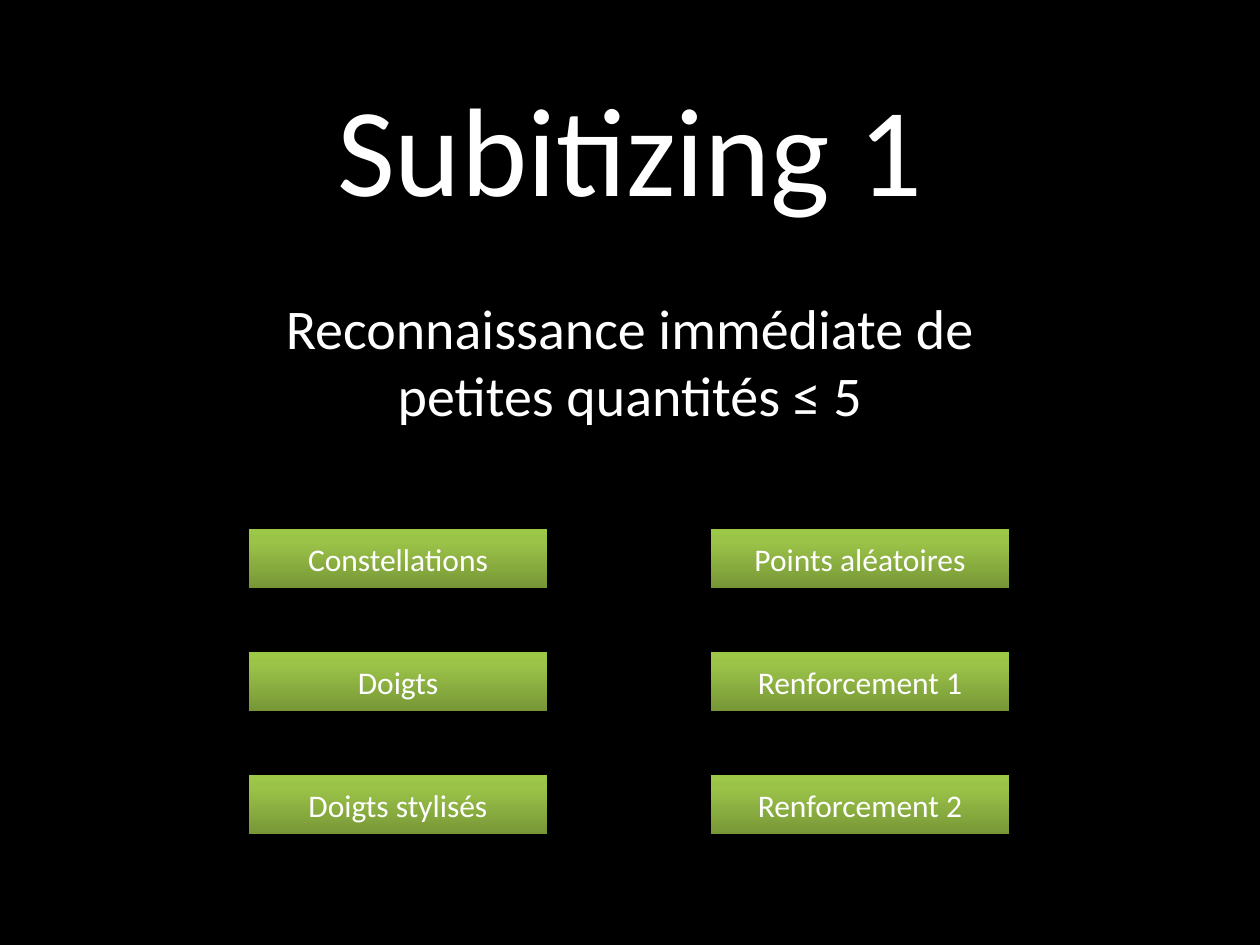
import copy
import pptx
import pptx.util
import pptx.dml.color
import pptx.enum.shapes
import pptx.enum.text
import pptx.oxml.ns

SCALE = 914400 / 126  # EMU in one px
FONT = "Calibri"
COLORS = {"back": "000000", "text": "FFFFFF",
          "dark": "779737", "mid": "9BC348", "light": "9DC746"}
STOPS = [(0, "dark"), (0.8, "mid"), (1, "light")]
LABELS = [["Constellations", "Doigts", "Doigts stylisés"],
          ["Points aléatoires", "Renforcement 1", "Renforcement 2"]]


def px(num):
    return pptx.util.Emu(round(num * SCALE))


def color(name):
    return pptx.dml.color.RGBColor.from_string(COLORS[name])


def write(shape, text, size, anchor):
    frame = shape.text_frame
    frame.text = text
    frame.word_wrap = True
    frame.vertical_anchor = anchor
    para = frame.paragraphs[0]
    para.alignment = pptx.enum.text.PP_ALIGN.CENTER
    para.font.name = FONT
    para.font.size = pptx.util.Pt(size)
    para.font.color.rgb = color("text")


def place(shape, left, top, width, height):
    shape.left, shape.top = px(left), px(top)
    shape.width, shape.height = px(width), px(height)


def shade(shape):
    fill = shape.fill
    fill.gradient()
    fill.gradient_angle = 90
    # The default gradient has two stops; add the third
    stops = shape._element.spPr.find(".//" + pptx.oxml.ns.qn("a:gsLst"))
    stops.append(copy.deepcopy(stops[-1]))
    for stop, (pos, name) in zip(fill.gradient_stops, STOPS):
        stop.position = pos
        stop.color.rgb = color(name)


def button(slide, text, left, top):
    kind = pptx.enum.shapes.MSO_SHAPE.ACTION_BUTTON_CUSTOM
    shape = slide.shapes.add_shape(kind, px(left), px(top), px(298), px(59))
    shape.shadow.inherit = False
    shape.line.fill.background()
    shade(shape)
    write(shape, text, 18, pptx.enum.text.MSO_ANCHOR.MIDDLE)


def main():
    deck = pptx.Presentation()
    deck.slide_width, deck.slide_height = px(1260), px(945)
    slide = deck.slides.add_slide(deck.slide_layouts[0])
    slide.background.fill.solid()
    slide.background.fill.fore_color.rgb = color("back")

    # Title and subtitle
    title, sub = slide.placeholders
    place(title, 94, 45, 1072, 203)
    write(title, "Subitizing 1", 72, pptx.enum.text.MSO_ANCHOR.MIDDLE)
    place(sub, 189, 287, 882, 242)
    write(sub, "Reconnaissance immédiate de petites quantités ≤ 5", 32,
          pptx.enum.text.MSO_ANCHOR.TOP)

    # Two columns of buttons
    for col, labels in enumerate(LABELS):
        for row, label in enumerate(labels):
            button(slide, label, 249 + 462 * col, 529 + 123 * row)

    deck.save("out.pptx")


if __name__ == "__main__":
    main()
